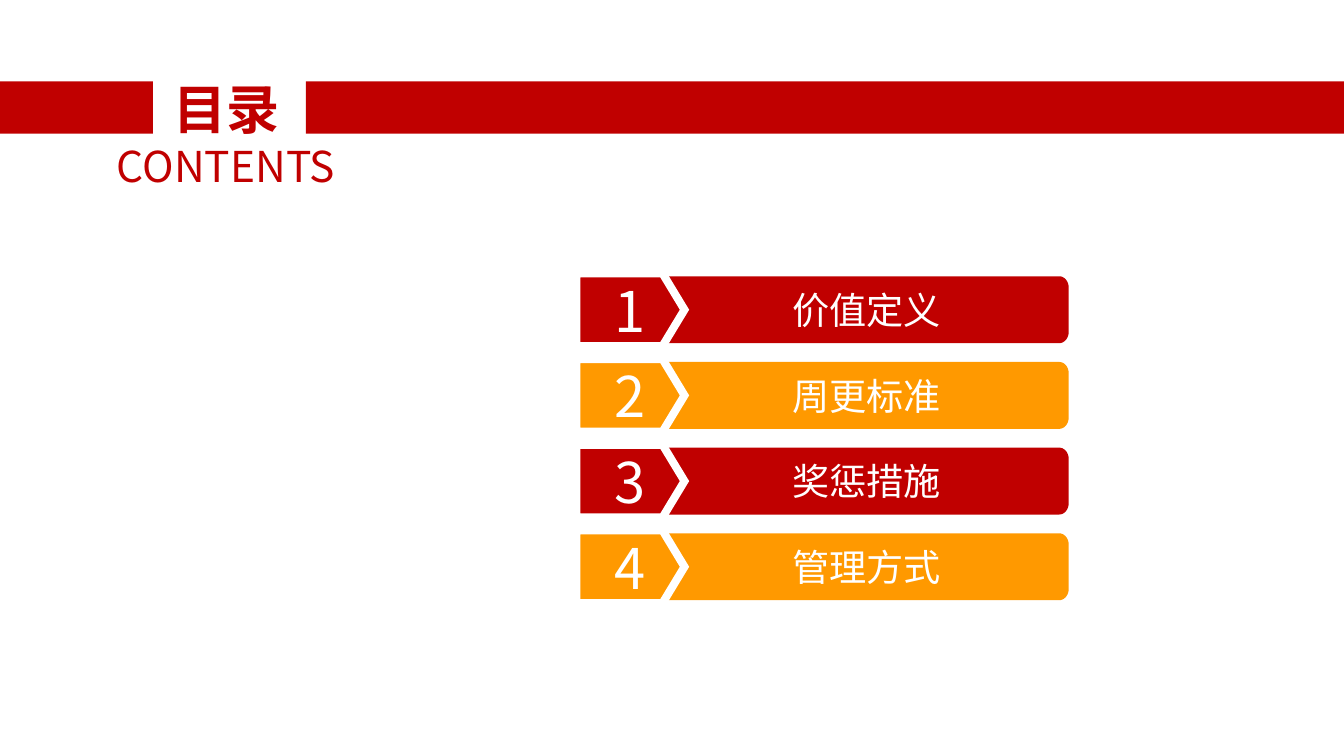
import math
from lxml import etree
from pptx import Presentation, util as u
from pptx.dml import color
from pptx.enum import shapes, text
from pptx.oxml import ns

COLORS = {"red": "C00000", "orange": "FF9900", "white": "FFFFFF"}
FONT = "Noto Sans CJK SC"
COLUMNS, ROWS = 128, 72


def rgb(name):
    return color.RGBColor.from_string(COLORS[name])


class Deck:
    def __init__(self, width, height):
        self.prs = Presentation()
        self.prs.slide_width = u.Inches(width)
        self.prs.slide_height = u.Inches(height)
        self.s = self.prs.slides.add_slide(self.prs.slide_layouts[5])

    def x(self, columns):
        return round(self.prs.slide_width * columns / COLUMNS)

    def y(self, rows):
        return round(self.prs.slide_height * rows / ROWS)

    def box(self, left, top, width, height):
        return self.x(left), self.y(top), self.x(width), self.y(height)

    def paint(self, sp, fill, border=0):
        sp.shadow.inherit = False
        sp.fill.solid()
        sp.fill.fore_color.rgb = rgb(fill)
        if not border:
            sp.line.fill.background()
            return
        sp.line.color.rgb = rgb("white")
        sp.line.width = u.Pt(border)
        ln = sp.element.spPr.find(ns.qn("a:ln"))
        etree.SubElement(ln, ns.qn("a:miter"), lim="800000")

    def set_text(self, sp, words, size, ink="white", bold=False, anchor=text.MSO_ANCHOR.MIDDLE):
        tf = sp.text_frame
        frame = {"margin_left": 0, "margin_top": 0, "margin_right": 0, "margin_bottom": 0,
                 "word_wrap": True, "auto_size": text.MSO_AUTO_SIZE.NONE,
                 "vertical_anchor": anchor}
        for key, value in frame.items():
            setattr(tf, key, value)
        p = tf.paragraphs[0]
        p.alignment = text.PP_ALIGN.CENTER
        r = p.add_run()
        r.text = words
        for key, value in {"name": FONT, "size": u.Pt(size), "bold": bold}.items():
            setattr(r.font, key, value)
        r.font.color.rgb = rgb(ink)
        etree.SubElement(r._r.get_or_add_rPr(), ns.qn("a:ea"), typeface=FONT)

    def title(self, words, size, *place):
        sp = self.s.shapes.title
        sp.left, sp.top, sp.width, sp.height = self.box(*place)
        self.set_text(sp, words, size, "red", True)

    def label(self, words, size, *place):
        sp = self.s.shapes.add_textbox(*self.box(*place))
        self.set_text(sp, words, size, "red", anchor=text.MSO_ANCHOR.TOP)

    def bar(self, fill, *place):
        sp = self.s.shapes.add_shape(shapes.MSO_SHAPE.RECTANGLE, *self.box(*place))
        self.paint(sp, fill)

    def outline(self, points, fill, words, size, border=0):
        start, *rest = [(self.x(x), self.y(y)) for x, y in points]
        builder = self.s.shapes.build_freeform(*start)
        builder.add_line_segments(rest, close=True)
        sp = builder.convert_to_shape()
        self.paint(sp, fill, border)
        self.set_text(sp, words, size)

    def panel(self, words, fill, left, middle, width, height):
        right, top, bottom = left + width, middle - height / 2, middle + height / 2
        rx, ry = 0.91, 1.06
        arc = [(math.sin(a), math.cos(a)) for a in (math.radians(d) for d in range(0, 91, 10))]
        upper = [(right - rx + rx * sx, top + ry - ry * cy) for sx, cy in arc]
        lower = [(x, 2 * middle - y) for x, y in reversed(upper)]
        self.outline([(left, top), *upper, *lower, (left, bottom)], fill, words, 28)

    def arrow(self, words, fill, left, middle, width, height, tip):
        right, top, bottom = left + width, middle - height / 2, middle + height / 2
        points = [(left, top), (right - tip, top), (right, middle),
                  (right - tip, bottom), (left, bottom)]
        self.outline(points, fill, words, 42.2, border=6)


def main():
    deck = Deck(14.06, 7.91)
    deck.bar("red", 0, 7.74, 14.57, 5)
    deck.bar("red", 29.13, 7.74, COLUMNS - 29.13, 5)
    deck.title("目录", 40, 15.84, 7.28, 11.38, 6.1)
    deck.label("CONTENTS", 32, 8.56, 13.38, 25.95, 4.92)
    for i, topic in enumerate(["价值定义", "周更标准", "奖惩措施", "管理方式"]):
        fill = ("red", "orange")[i % 2]
        middle = 29.5 + 8.16 * i
        deck.panel(topic, fill, 63.27, middle, 38.51, 6.37)
        deck.arrow(str(i + 1), fill, 54.9, middle, 10.29, 6.92, 2.09)
    deck.prs.save("out.pptx")


if __name__ == "__main__":
    main()
